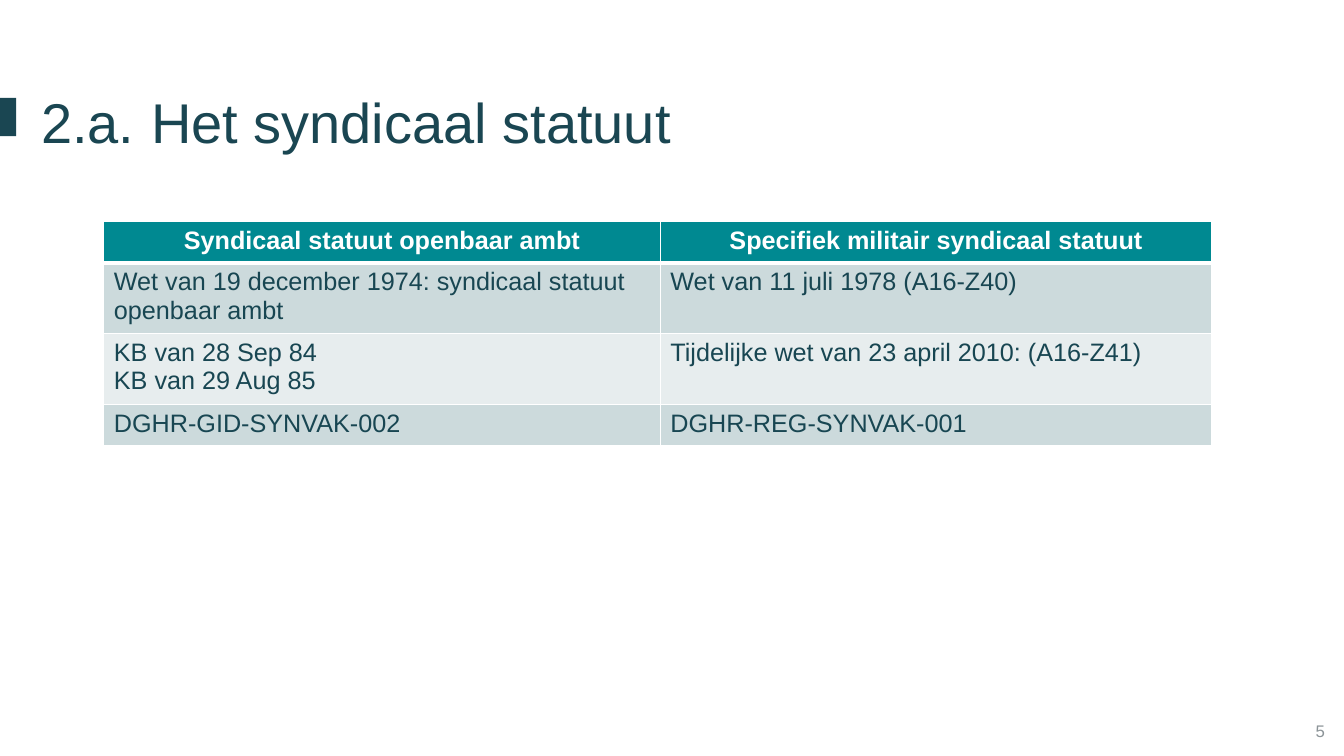
from dataclasses import dataclass

from lxml.etree import SubElement
from pptx import Presentation
from pptx.dml.color import RGBColor
from pptx.enum.shapes import MSO_SHAPE as Shape
from pptx.enum.text import MSO_ANCHOR as Anchor, PP_ALIGN as Align
from pptx.oxml.ns import qn
from pptx.util import Inches, Pt

DARK, INK, TEAL, WHITE, GREY = "1A4652", "184652", "008991", "FFFFFF", "8C9498"
BANDS = ("CCDADC", "E7EDEE")


@dataclass
class Row:
    cells: tuple[str, str]
    height: float
    fill: str
    color: str = INK
    head: bool = False
    top: float = 1
    base: float = 1


def color(code: str) -> RGBColor:
    return RGBColor.from_string(code)


def style(frame, size: float, code: str, align=Align.LEFT, bold: bool = False) -> None:
    for para in frame.paragraphs:
        para.alignment = align
        for run in para.runs:
            font = run.font
            font.name, font.size, font.bold = "Arial", Pt(size), bold
            font.color.rgb = color(code)


def add_text(slide, text: str, box: tuple, size: float, code: str,
             align=Align.LEFT, anchor=Anchor.TOP):
    frame = slide.shapes.add_textbox(*map(Inches, box)).text_frame
    frame.word_wrap = True
    frame.vertical_anchor = anchor
    frame.text = text
    style(frame, size, code, align)
    return frame


def add_edges(cell, top: float, base: float) -> None:
    props = cell._tc.get_or_add_tcPr()
    for side, width in (("L", 1), ("R", 1), ("T", top), ("B", base)):
        line = SubElement(props, qn(f"a:ln{side}"), w=str(Pt(width)))
        fill = SubElement(line, qn("a:solidFill"))
        SubElement(fill, qn("a:srgbClr"), val=WHITE)


def add_table(slide, rows: list[Row], left: float, top: float, widths: tuple) -> None:
    total = sum(row.height for row in rows)
    box = map(Inches, (left, top, sum(widths), total))
    table = slide.shapes.add_table(len(rows), len(widths), *box).table
    for col, width in zip(table.columns, widths):
        col.width = Inches(width)
    for line, row in zip(table.rows, rows):
        line.height = Inches(row.height)
        for cell, text in zip(line.cells, row.cells):
            cell.text = text
            align = Align.CENTER if row.head else Align.LEFT
            style(cell.text_frame, 18, row.color, align, row.head)
            add_edges(cell, row.top, row.base)
            cell.fill.solid()
            cell.fill.fore_color.rgb = color(row.fill)


def main() -> None:
    deck = Presentation()
    deck.slide_width, deck.slide_height = Inches(13.33), Inches(7.5)
    slide = deck.slides.add_slide(deck.slide_layouts[6])

    # Accent block at the left edge
    block = slide.shapes.add_shape(Shape.RECTANGLE, *map(Inches, (0, 0.97, 0.16, 0.38)))
    block.shadow.inherit = False
    block.fill.solid()
    block.fill.fore_color.rgb = color(DARK)
    block.line.fill.background()

    # Page number
    add_text(slide, "5", (10.24, 7.05, 3, 0.4), 12, GREY, Align.RIGHT, Anchor.MIDDLE)

    # Title with a hanging number
    title = add_text(slide, "2.a.\tHet syndicaal statuut", (0.31, 0.82, 12.35, 0.77), 40, DARK)
    props = title.paragraphs[0]._p.get_or_add_pPr()
    props.set("marL", str(Inches(0.59)))
    props.set("indent", str(Inches(-0.59)))

    # Table of statutes
    rows = [
        Row(("Syndicaal statuut openbaar ambt", "Specifiek militair syndicaal statuut"),
            0.41, TEAL, WHITE, head=True, base=3),
        Row(("Wet van 19 december 1974: syndicaal statuut openbaar ambt",
             "Wet van 11 juli 1978 (A16-Z40)"), 0.66, BANDS[0], top=3),
        Row(("KB van 28 Sep 84\nKB van 29 Aug 85",
             "Tijdelijke wet van 23 april 2010: (A16-Z41)"), 0.66, BANDS[1]),
        Row(("DGHR-GID-SYNVAK-002", "DGHR-REG-SYNVAK-001"), 0.41, BANDS[0]),
    ]
    add_table(slide, rows, 1.03, 2.2, (5.52, 5.47))

    deck.save("out.pptx")


if __name__ == "__main__":
    main()
